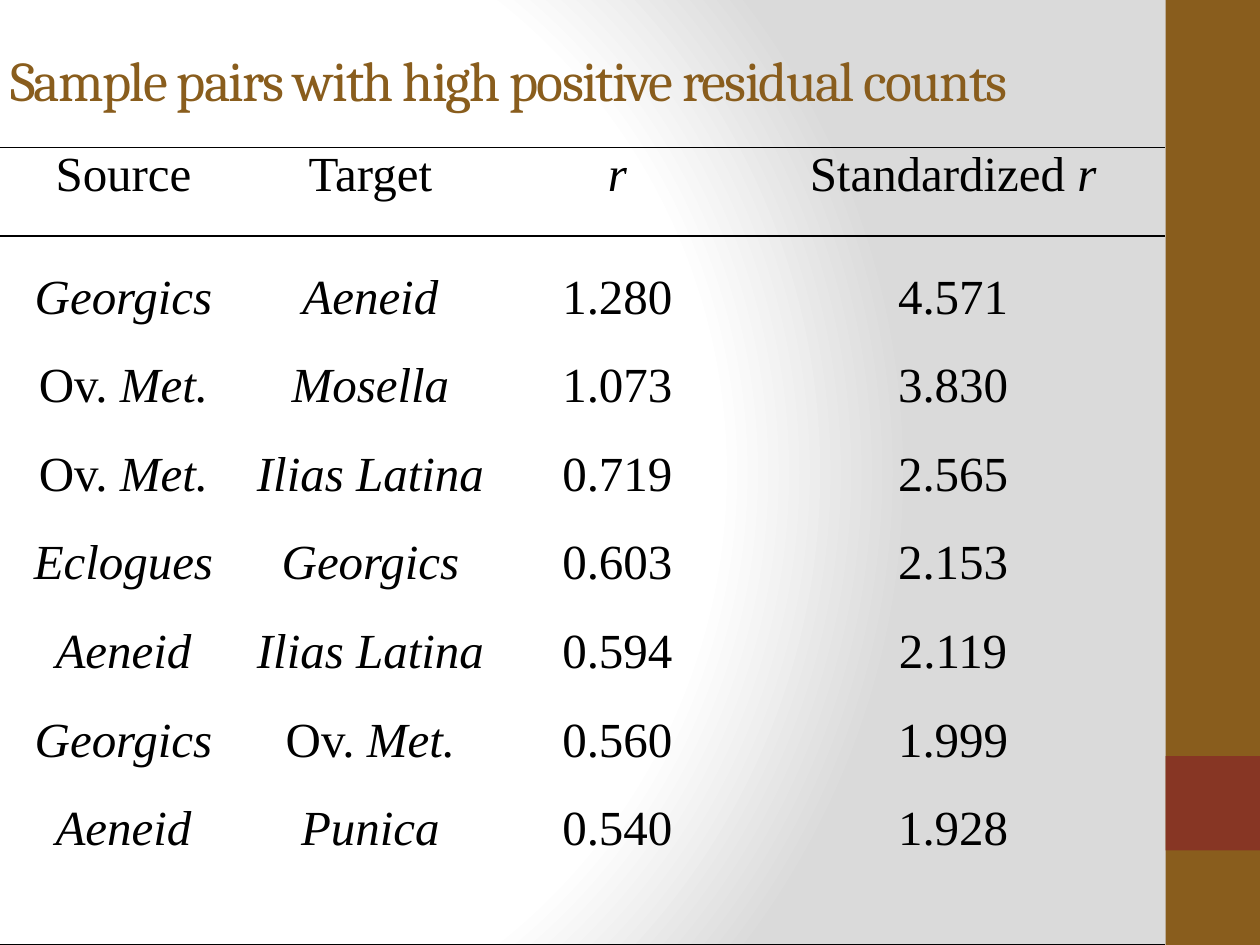
from lxml import etree
from pptx import Presentation, util as u
from pptx.dml.color import RGBColor
from pptx.enum import shapes, text
from pptx.oxml import parse_xml
from pptx.oxml.ns import nsdecls, qn

TITLE = "Sample pairs with high positive residual counts"
HEADER = ("Source", "Target", "*r*", "Standardized *r*")
PAIRS = [
    ("*Georgics*", "*Aeneid*", "1.280", "4.571"),
    ("Ov. *Met.*", "*Mosella*", "1.073", "3.830"),
    ("Ov. *Met.*", "*Ilias Latina*", "0.719", "2.565"),
    ("*Eclogues*", "*Georgics*", "0.603", "2.153"),
    ("*Aeneid*", "*Ilias Latina*", "0.594", "2.119"),
    ("*Georgics*", "Ov. *Met.*", "0.560", "1.999"),
    ("*Aeneid*", "*Punica*", "0.540", "1.928"),
]
ROWS = [HEADER, *PAIRS, ("",) * len(HEADER)]
THEME = dict(
    brown="895D1D", red="873624", ink="000000", light="FFFFFF", grey="DADADA",
    title_font="Cambria", table_font="Times New Roman", title_size=32, table_size=28,
)
NO_STYLE = "{2D5ABB26-0587-4C30-8999-92F81FD0307C}"
WIDTH, HEIGHT, BAR = 10, 7.5, 0.75
CONTENT = WIDTH - BAR
TABLE_TOP = 1.17
NARROW = 1.96


def write(tf, content, *, font, size, color, align, anchor, spacing=None):
    tf.vertical_anchor = anchor
    p = tf.paragraphs[0]
    p.alignment = align
    for i, part in enumerate(content.split("*")):
        if not part:
            continue
        r = p.add_run()
        r.text = part
        r.font.name, r.font.size = font, u.Pt(size)
        r.font.italic = i % 2 == 1
        r.font.color.rgb = RGBColor.from_string(color)
        if spacing is not None:
            r.font._element.set("spc", str(spacing * 100))


def set_background(s):
    stops = "".join(
        f'<a:gs pos="{pos * 1000}"><a:srgbClr val="{THEME[name]}"/></a:gs>'
        for pos, name in ((0, "light"), (75, "light"), (100, "grey"))
    )
    s.element.cSld.insert(0, parse_xml(
        f'<p:bg {nsdecls("p", "a")}><p:bgPr><a:gradFill rotWithShape="1">'
        f'<a:gsLst>{stops}</a:gsLst><a:path path="circle">'
        '<a:fillToRect l="20000" t="50000" r="100000" b="50000"/></a:path>'
        '</a:gradFill><a:effectLst/></p:bgPr></p:bg>'))


def add_bar(s, top, height, color):
    sp = s.shapes.add_shape(shapes.MSO_SHAPE.RECTANGLE, u.Inches(CONTENT),
                            u.Inches(top), u.Inches(BAR), u.Inches(height))
    sp.shadow.inherit = False
    sp.fill.solid()
    sp.fill.fore_color.rgb = RGBColor.from_string(color)
    sp.line.fill.background()


def set_borders(cell, visible):
    tcPr = cell._tc.get_or_add_tcPr()
    for i, side in enumerate("LRTB"):
        ln = etree.Element(qn(f"a:ln{side}"), w=str(u.Pt(1)))
        if side in visible:
            fill = etree.SubElement(ln, qn("a:solidFill"))
            etree.SubElement(fill, qn("a:srgbClr"), val=THEME["ink"])
        else:
            etree.SubElement(ln, qn("a:noFill"))
        tcPr.insert(i, ln)


def add_pairs_table(s):
    height = HEIGHT - TABLE_TOP
    tbl = s.shapes.add_table(len(ROWS), len(HEADER), 0, u.Inches(TABLE_TOP),
                             u.Inches(CONTENT), u.Inches(height)).table
    tbl.first_row = tbl.horz_banding = False
    tbl._tbl.tblPr.find(qn("a:tableStyleId")).text = NO_STYLE
    widths = [NARROW] * 3 + [CONTENT - 3 * NARROW]
    for col, width in zip(tbl.columns, widths):
        col.width = u.Inches(width)
    borders = {0: "TB", 1: "T", len(ROWS) - 1: "B"}
    for i, row in enumerate(ROWS):
        tbl.rows[i].height = u.Inches(height / len(ROWS))
        for j, content in enumerate(row):
            cell = tbl.cell(i, j)
            cell.margin_left = cell.margin_right = u.Inches(0.07)
            cell.margin_top = cell.margin_bottom = 0
            cell.fill.background()
            set_borders(cell, borders.get(i, ""))
            anchor = text.MSO_ANCHOR.BOTTOM if i else text.MSO_ANCHOR.TOP
            write(cell.text_frame, content, font=THEME["table_font"],
                  size=THEME["table_size"], color=THEME["ink"],
                  align=text.PP_ALIGN.CENTER, anchor=anchor)
            cell.vertical_anchor = anchor


def main():
    prs = Presentation()
    prs.slide_width, prs.slide_height = u.Inches(WIDTH), u.Inches(HEIGHT)
    s = prs.slides.add_slide(prs.slide_layouts[5])
    set_background(s)
    add_bar(s, 0, HEIGHT, THEME["brown"])
    add_bar(s, 6, BAR, THEME["red"])
    title = s.shapes.title
    title.left, title.top = 0, 0
    title.width, title.height = u.Inches(CONTENT), u.Inches(1.25)
    tf = title.text_frame
    tf.word_wrap = True
    tf.auto_size = text.MSO_AUTO_SIZE.NONE
    tf.margin_left = u.Inches(0.08)
    write(tf, TITLE, font=THEME["title_font"], size=THEME["title_size"],
          color=THEME["brown"], align=text.PP_ALIGN.LEFT,
          anchor=text.MSO_ANCHOR.MIDDLE, spacing=-1)
    add_pairs_table(s)
    prs.save("out.pptx")


if __name__ == "__main__":
    main()
